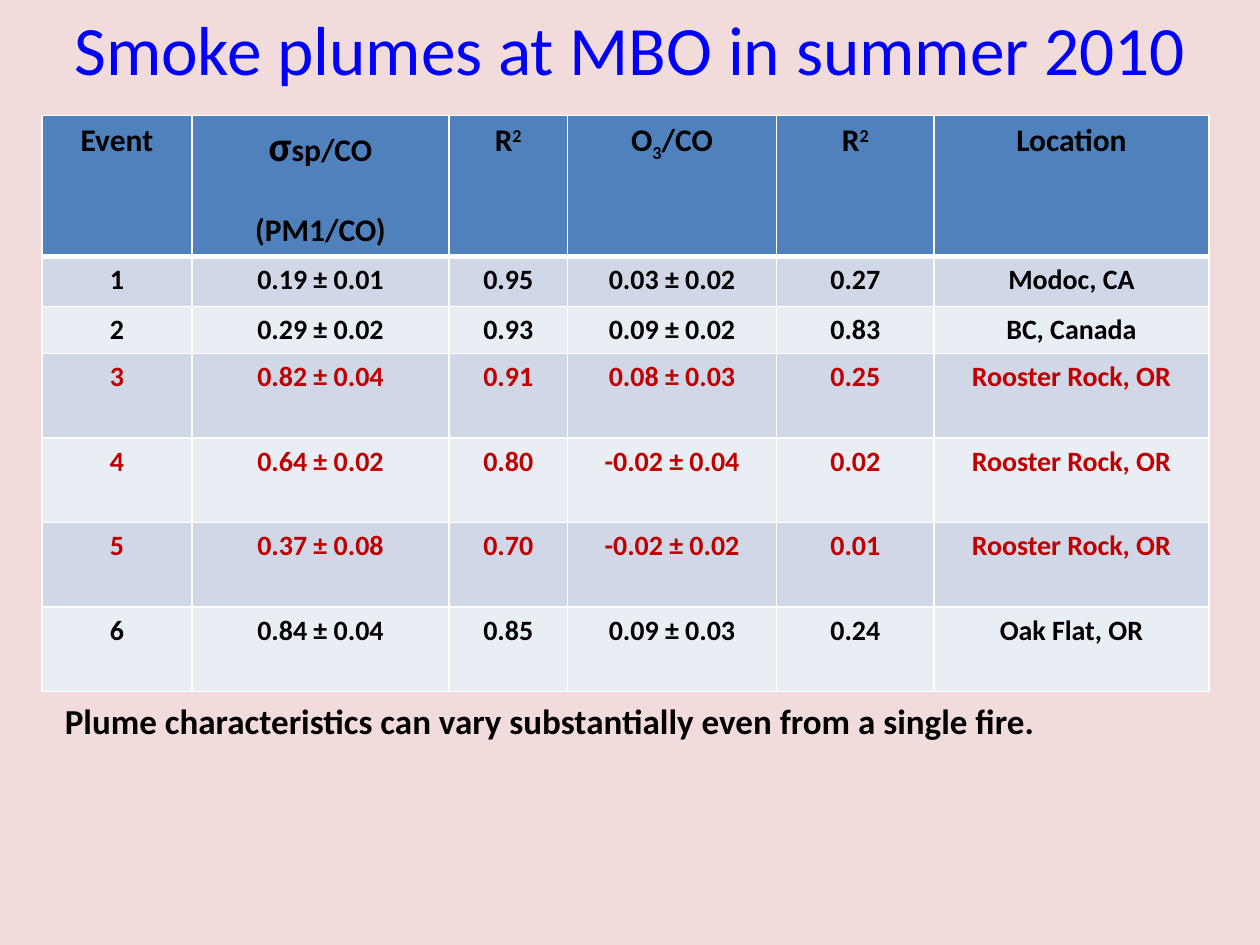
from dataclasses import dataclass

from lxml import etree
from pptx import Presentation
from pptx.dml.color import RGBColor
from pptx.enum.text import MSO_ANCHOR, PP_ALIGN
from pptx.oxml.ns import qn
from pptx.util import Pt

CENTER, LEFT = PP_ALIGN.CENTER, PP_ALIGN.LEFT
TOP, MIDDLE = MSO_ANCHOR.TOP, MSO_ANCHOR.MIDDLE


@dataclass(frozen=True)
class Theme:
    font: str = "Calibri"
    background: str = "F2DCDB"
    title: str = "0000FF"
    text: str = "000000"
    highlight: str = "C00000"
    header: str = "4F81BD"
    bands: tuple[str, str] = ("D0D8E8", "E9EDF4")
    border: str = "FFFFFF"
    title_size: float = 39.6
    symbol_size: float = 24
    note_size: float = 20
    header_size: float = 18
    body_size: float = 16
    rule: float = 1
    header_rule: float = 3


@dataclass(frozen=True)
class Run:
    text: str
    size: float
    color: str
    bold: bool = True
    baseline: int = 0


@dataclass(frozen=True)
class Box:
    left: float
    top: float
    width: float
    height: float
    run: Run
    align: PP_ALIGN = LEFT
    anchor: MSO_ANCHOR = TOP


@dataclass(frozen=True)
class Plume:
    values: tuple[str, ...]
    height: float
    color: str


T = Theme()


def head(text: str, baseline: int = 0, size: float = T.header_size) -> Run:
    return Run(text, size, T.text, baseline=baseline)


R_SQUARED = [[head("R"), head("2", 30)]]
HEADER = [
    [[head("Event")]],
    [[head("σ", size=T.symbol_size), head("sp/CO")], [head("(PM1/CO)")]],
    R_SQUARED,
    [[head("O"), head("3", -25), head("/CO")]],
    R_SQUARED,
    [[head("Location")]],
]
HEADER_HEIGHT = 80.5
HEADER_GAP = 22
COLUMNS = (85.7, 146.9, 67.7, 119.5, 90, 157)
TABLE_LEFT, TABLE_TOP = 24, 66
PLUMES = [
    Plume(("1", "0.19 ± 0.01", "0.95", "0.03 ± 0.02", "0.27", "Modoc, CA"), 28.8, T.text),
    Plume(("2", "0.29 ± 0.02", "0.93", "0.09 ± 0.02", "0.83", "BC, Canada"), 26.75, T.text),
    Plume(("3", "0.82 ± 0.04", "0.91", "0.08 ± 0.03", "0.25", "Rooster Rock, OR"), 48.3, T.highlight),
    Plume(("4", "0.64 ± 0.02", "0.80", "-0.02 ± 0.04", "0.02", "Rooster Rock, OR"), 48.3, T.highlight),
    Plume(("5", "0.37 ± 0.08", "0.70", "-0.02 ± 0.02", "0.01", "Rooster Rock, OR"), 48.3, T.highlight),
    Plume(("6", "0.84 ± 0.04", "0.85", "0.09 ± 0.03", "0.24", "Oak Flat, OR"), 48.3, T.text),
]
BOXES = [
    Box(18, 0, 684, 54,
        Run("Smoke plumes at MBO in summer 2010", T.title_size, T.title, False), CENTER, MIDDLE),
    Box(30, 396, 648, 31.5,
        Run("Plume characteristics can vary substantially even from a single fire.",
            T.note_size, T.text)),
]


def add_run(p, run: Run) -> None:
    r = p.add_run()
    r.text = run.text
    for name, value in {"name": T.font, "size": Pt(run.size), "bold": run.bold}.items():
        setattr(r.font, name, value)
    r.font.color.rgb = RGBColor.from_string(run.color)
    if run.baseline:
        r.font._element.set("baseline", str(run.baseline * 1000))


def add_box(slide, box: Box) -> None:
    sp = slide.shapes.add_textbox(Pt(box.left), Pt(box.top), Pt(box.width), Pt(box.height))
    tf = sp.text_frame
    tf.word_wrap = True
    tf.vertical_anchor = box.anchor
    p = tf.paragraphs[0]
    p.alignment = box.align
    add_run(p, box.run)


def set_borders(cell, top: float, bottom: float) -> None:
    """Put the border lines ahead of the fill, as the schema orders them."""
    tc_pr = cell._tc.get_or_add_tcPr()
    widths = {"a:lnL": T.rule, "a:lnR": T.rule, "a:lnT": top, "a:lnB": bottom}
    for i, (tag, width) in enumerate(widths.items()):
        ln = etree.Element(qn(tag), w=str(Pt(width)))
        fill = etree.SubElement(ln, qn("a:solidFill"))
        etree.SubElement(fill, qn("a:srgbClr"), val=T.border)
        tc_pr.insert(i, ln)


def fill_cell(cell, paragraphs: list[list[Run]], color: str, top: float, bottom: float) -> None:
    cell.fill.solid()
    cell.fill.fore_color.rgb = RGBColor.from_string(color)
    set_borders(cell, top, bottom)
    tf = cell.text_frame
    for i, runs in enumerate(paragraphs):
        p = tf.add_paragraph() if i else tf.paragraphs[0]
        p.alignment = CENTER
        if i:
            p.space_before = Pt(HEADER_GAP)
        for run in runs:
            add_run(p, run)


def add_plume_table(slide) -> None:
    heights = [HEADER_HEIGHT] + [plume.height for plume in PLUMES]
    table = slide.shapes.add_table(
        len(heights), len(COLUMNS), Pt(TABLE_LEFT), Pt(TABLE_TOP),
        Pt(sum(COLUMNS)), Pt(sum(heights))).table
    for column, width in zip(table.columns, COLUMNS):
        column.width = Pt(width)
    for row, height in zip(table.rows, heights):
        row.height = Pt(height)
    for c, paragraphs in enumerate(HEADER):
        fill_cell(table.cell(0, c), paragraphs, T.header, T.rule, T.header_rule)
    for r, plume in enumerate(PLUMES):
        top = T.rule if r else T.header_rule
        for c, value in enumerate(plume.values):
            run = Run(value, T.body_size, plume.color)
            fill_cell(table.cell(r + 1, c), [[run]], T.bands[r % 2], top, T.rule)


def main() -> None:
    prs = Presentation()
    prs.slide_width, prs.slide_height = Pt(720), Pt(540)
    slide = prs.slides.add_slide(prs.slide_layouts[6])
    slide.background.fill.solid()
    slide.background.fill.fore_color.rgb = RGBColor.from_string(T.background)
    add_plume_table(slide)
    for box in BOXES:
        add_box(slide, box)
    prs.save("out.pptx")


if __name__ == "__main__":
    main()
